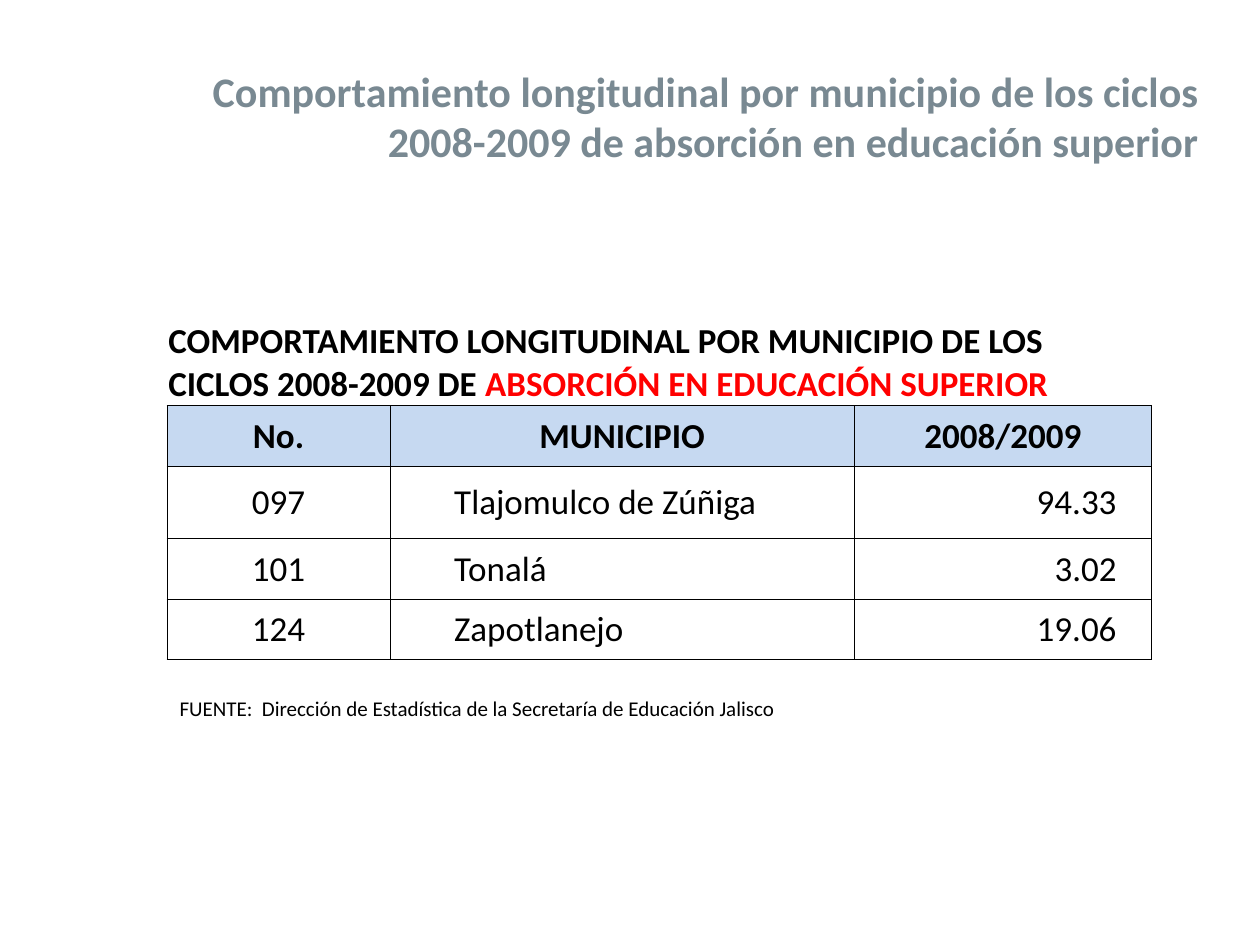
from dataclasses import dataclass

from pptx import Presentation
from pptx.dml.color import RGBColor
from pptx.enum.text import MSO_ANCHOR, MSO_AUTO_SIZE, PP_ALIGN
from pptx.oxml.ns import qn
from pptx.util import Pt
from lxml import etree

LEFT, MID, RIGHT = PP_ALIGN.LEFT, PP_ALIGN.CENTER, PP_ALIGN.RIGHT
CENTER, BOTTOM = MSO_ANCHOR.MIDDLE, MSO_ANCHOR.BOTTOM
GROW = MSO_AUTO_SIZE.SHAPE_TO_FIT_TEXT
FONT = "Calibri"
HEX = {"ink": "000000", "red": "FF0000", "head": "C6D9F1", "title": "798992"}
SIDES = ("L", "R", "T", "B")


@dataclass
class Label:
    text: str
    box: tuple
    size: float
    color: str
    bold: bool = False
    align: PP_ALIGN = LEFT
    wrap: bool = True


@dataclass
class Column:
    head: str
    width: float
    align: PP_ALIGN
    indent: float = 0
    right: float = 0.7


LABELS = [
    Label("FUENTE:  Dirección de Estadística de la Secretaría de Educación Jalisco",
          (95.5, 393.8, 359.3, 21.8), 12, "ink", wrap=False),
    Label("Comportamiento longitudinal por municipio de los ciclos 2008-2009 "
          "de absorción en educación superior",
          (62, 33.8, 630, 65.4), 24, "title", True, RIGHT),
]
COLUMNS = [
    Column("No.", 127.4, MID),
    Column("MUNICIPIO", 265.3, LEFT, indent=36),
    Column("2008/2009", 169.9, RIGHT, right=20),
]
HEADING = [
    ("COMPORTAMIENTO LONGITUDINAL POR MUNICIPIO DE LOS CICLOS 2008-2009 DE", "ink"),
    (" ABSORCIÓN EN EDUCACIÓN SUPERIOR", "red"),
]
ROWS = [
    ("097", "Tlajomulco de Zúñiga", "94.33"),
    ("101", "Tonalá", "3.02"),
    ("124", "Zapotlanejo", "19.06"),
]
HEIGHTS = (102.2, 34.5, 41.2, 34.8, 34.8)


def style(para, size: float, color: str, bold: bool, align: PP_ALIGN) -> None:
    para.alignment = align
    font = para.font
    font.name, font.size, font.bold = FONT, Pt(size), bold
    font.color.rgb = RGBColor.from_string(HEX[color])


def add_label(slide, label: Label) -> None:
    box = slide.shapes.add_textbox(*map(Pt, label.box))
    frame = box.text_frame
    frame.word_wrap = label.wrap
    frame.auto_size = GROW
    para = frame.paragraphs[0]
    para.text = label.text
    style(para, label.size, label.color, label.bold, label.align)


def set_cell(cell, lines: tuple, fill: str = "", right: float = 0.7,
             anchor: MSO_ANCHOR = CENTER) -> None:
    cell.margin_left = cell.margin_top = Pt(0.7)
    cell.margin_right, cell.margin_bottom = Pt(right), Pt(0)
    cell.vertical_anchor = anchor
    # Borders go before the fill
    props = cell._tc.get_or_add_tcPr()
    for side in SIDES:
        line = etree.SubElement(props, qn(f"a:ln{side}"), w=str(Pt(0.5)))
        if side in lines:
            solid = etree.SubElement(line, qn("a:solidFill"))
            etree.SubElement(solid, qn("a:srgbClr"), val=HEX["ink"])
        else:
            etree.SubElement(line, qn("a:noFill"))
    if fill:
        cell.fill.solid()
        cell.fill.fore_color.rgb = RGBColor.from_string(HEX[fill])
    else:
        cell.fill.background()


def add_grid(slide) -> None:
    width = sum(col.width for col in COLUMNS)
    frame = slide.shapes.add_table(len(HEIGHTS), len(COLUMNS), Pt(95.5), Pt(129.6),
                                   Pt(width), Pt(sum(HEIGHTS)))
    table = frame.table
    table.first_row = table.horz_banding = False
    for row, height in zip(table.rows, HEIGHTS):
        row.height = Pt(height)

    # Heading across all columns
    first = table.cell(0, 0)
    first.merge(table.cell(0, len(COLUMNS) - 1))
    for cell in table.rows[0].cells:
        set_cell(cell, ("B",), anchor=BOTTOM)
    para = first.text_frame.paragraphs[0]
    style(para, 20, "ink", True, LEFT)
    for text, color in HEADING:
        run = para.add_run()
        run.text = text
        run.font.color.rgb = RGBColor.from_string(HEX[color])

    # Column heads and values
    for c, col in enumerate(COLUMNS):
        table.columns[c].width = Pt(col.width)
        texts = [col.head] + [row[c] for row in ROWS]
        for r, text in enumerate(texts, 1):
            top = r == 1
            cell = table.cell(r, c)
            set_cell(cell, SIDES, "head" if top else "", 0.7 if top else col.right)
            para = cell.text_frame.paragraphs[0]
            para.text = text
            if col.indent and not top:
                para.level = 1
                props = para._p.get_or_add_pPr()
                props.set("marL", str(Pt(col.indent)))
                props.set("indent", "0")
            style(para, 20, "ink", top, MID if top else col.align)


def main() -> None:
    deck = Presentation()
    deck.slide_width, deck.slide_height = Pt(720), Pt(540)
    slide = deck.slides.add_slide(deck.slide_layouts[6])
    add_grid(slide)
    for label in LABELS:
        add_label(slide, label)
    deck.save("out.pptx")


if __name__ == "__main__":
    main()
